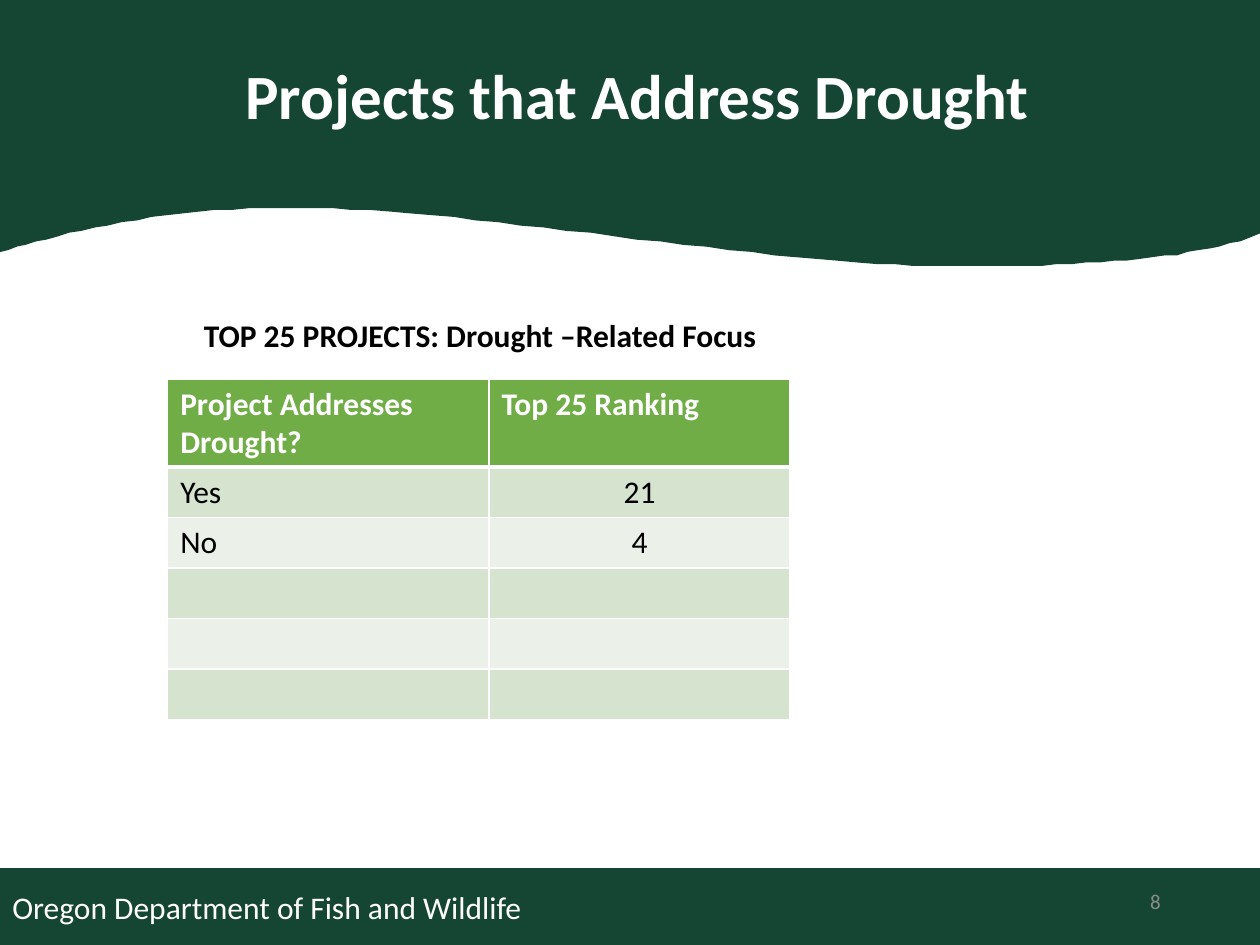
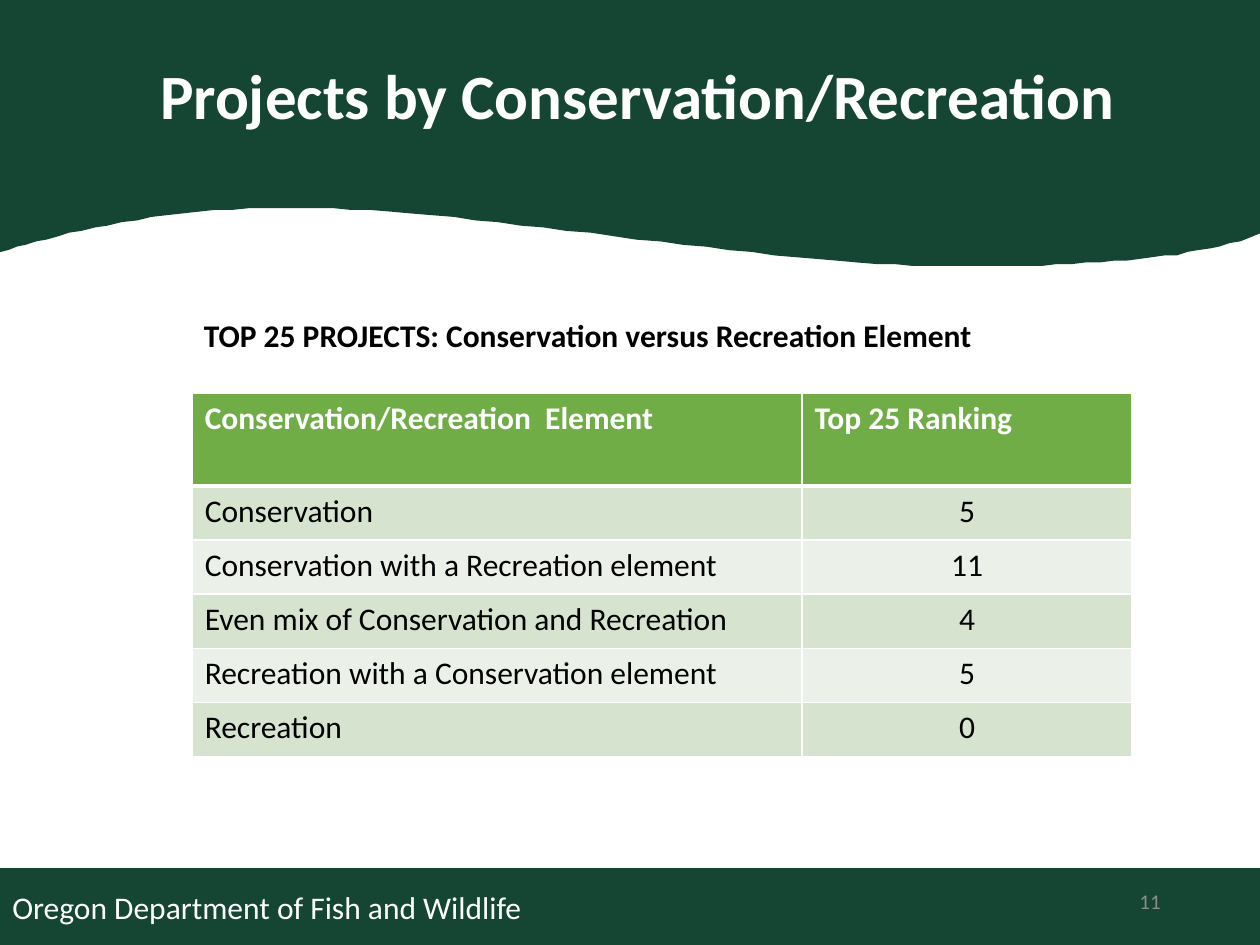
from lxml import etree
from pptx import Presentation
from pptx.dml.color import RGBColor
from pptx.enum.shapes import MSO_SHAPE as Shape
from pptx.enum.text import MSO_ANCHOR as Anchor, PP_ALIGN as Align
from pptx.oxml.ns import qn
from pptx.util import Pt

FOREST = RGBColor(0x14, 0x46, 0x33)
LEAF = RGBColor(0x70, 0xAD, 0x47)
BAND_DARK = RGBColor(0xD5, 0xE3, 0xCF)
BAND_LIGHT = RGBColor(0xEB, 0xF1, 0xE9)
GREY = RGBColor(0x8C, 0x8C, 0x8C)
WHITE = RGBColor(0xFF, 0xFF, 0xFF)
BLACK = RGBColor(0, 0, 0)
FONT = "Calibri"
DEPARTMENT = "Oregon Department of Fish and Wildlife"

# Lower edge of the header: Bezier segments in points, from right to left
WAVE_CORNERS = [(-17.3, 146.9), (-14.4, -4.3), (735.1, -4.3), (738, 120.2)]
WAVE_CURVES = [
    [(738, 120.2), (704.2, 145.4), (626.4, 149.8), (532.1, 149)],
    [(532.1, 149), (437.8, 147.6), (263.5, 115.9), (171.4, 115.9)],
    [(171.4, 115.9), (70.6, 113), (-17.3, 146.9), (-17.3, 146.9)],
]
CURVE_STEPS = 30

SLIDES = [
    {
        "number": "8",
        "title": "Projects that Address Drought",
        "caption": "TOP 25 PROJECTS: Drought –Related Focus",
        "table_at": (95.8, 216.5),
        "columns": (183.6, 172.1),
        "header_height": 50.4,
        "row_height": 28.8,
        "rows": [("Project Addresses Drought?", "Top 25 Ranking"),
                 ("Yes", "21"), ("No", "4"), ("", ""), ("", ""), ("", "")],
    },
    {
        "number": "11",
        "title": "Projects by Conservation/Recreation",
        "caption": "TOP 25 PROJECTS: Conservation versus Recreation Element",
        "table_at": (109.8, 224.8),
        "columns": (348.5, 188.6),
        "header_height": 53,
        "row_height": 30.9,
        "rows": [("Conservation/Recreation  Element", "Top 25 Ranking"),
                 ("Conservation", "5"),
                 ("Conservation with a Recreation element", "11"),
                 ("Even mix of Conservation and Recreation", "4"),
                 ("Recreation with a Conservation element", "5"),
                 ("Recreation", "0")],
    },
]


def write(text_frame, text, size=18, color=BLACK, bold=False,
          align=Align.LEFT, anchor=Anchor.TOP):
    text_frame.word_wrap = True
    text_frame.vertical_anchor = anchor
    paragraph = text_frame.paragraphs[0]
    paragraph.alignment = align
    if text:
        run = paragraph.add_run()
        run.text = text
        run.font.name = FONT
        run.font.size = Pt(size)
        run.font.bold = bold
        run.font.color.rgb = color


def add_border(cell, side, width):
    """Draw a white line on one side (L, R, T or B) of a table cell."""
    properties = cell._tc.get_or_add_tcPr()
    line = etree.SubElement(properties, qn(f"a:ln{side}"), w=str(Pt(width)))
    fill = etree.SubElement(line, qn("a:solidFill"))
    etree.SubElement(fill, qn("a:srgbClr"), val=str(WHITE))


wave_points = list(WAVE_CORNERS)
for start, control_1, control_2, end in WAVE_CURVES:
    for step in range(1, CURVE_STEPS + 1):
        t = step / CURVE_STEPS
        wave_points.append(tuple(
            (1 - t) ** 3 * a + 3 * (1 - t) ** 2 * t * b + 3 * (1 - t) * t ** 2 * c + t ** 3 * d
            for a, b, c, d in zip(start, control_1, control_2, end)))

presentation = Presentation()
presentation.slide_width = Pt(720)
presentation.slide_height = Pt(540)

for content in SLIDES:
    slide = presentation.slides.add_slide(presentation.slide_layouts[6])
    shapes = slide.shapes

    # Footer band and wavy header
    footer = shapes.add_shape(Shape.RECTANGLE, 0, Pt(496.8), Pt(720), Pt(43.2))
    write(footer.text_frame, DEPARTMENT, color=WHITE, anchor=Anchor.MIDDLE)
    builder = shapes.build_freeform(*wave_points[0], scale=Pt(1))
    builder.add_line_segments(wave_points[1:], close=True)
    header = builder.convert_to_shape()
    for band, line_width in ((footer, 1), (header, 6)):
        band.shadow.inherit = False
        band.fill.solid()
        band.fill.fore_color.rgb = FOREST
        band.line.color.rgb = FOREST
        band.line.width = Pt(line_width)

    # Slide number, title and table caption
    number = shapes.add_textbox(Pt(508.3), Pt(500.4), Pt(162), Pt(28.8))
    write(number.text_frame, content["number"], size=12, color=GREY,
          align=Align.RIGHT, anchor=Anchor.MIDDLE)
    title = shapes.add_textbox(Pt(30.2), Pt(28.8), Pt(668.2), Pt(51))
    write(title.text_frame, content["title"], size=36, color=WHITE, bold=True,
          align=Align.CENTER)
    caption = shapes.add_textbox(Pt(109.4), Pt(177.1), Pt(500.4), Pt(29))
    write(caption.text_frame, content["caption"], bold=True)

    # Ranking table
    rows, columns = content["rows"], content["columns"]
    heights = [content["header_height"]] + [content["row_height"]] * (len(rows) - 1)
    left, top = content["table_at"]
    table = shapes.add_table(len(rows), len(columns), Pt(left), Pt(top),
                             Pt(sum(columns)), Pt(sum(heights))).table
    for column, width in zip(table.columns, columns):
        column.width = Pt(width)
    for row_index, (row, height) in enumerate(zip(rows, heights)):
        table.rows[row_index].height = Pt(height)
        is_header = row_index == 0
        fill_color = LEAF if is_header else BAND_DARK if row_index % 2 else BAND_LIGHT
        for column_index, text in enumerate(row):
            cell = table.cell(row_index, column_index)
            centred = column_index == 1 and not is_header
            write(cell.text_frame, text, bold=is_header,
                  color=WHITE if is_header else BLACK,
                  align=Align.CENTER if centred else Align.LEFT)
            for side in "LR":
                add_border(cell, side, 1)
            add_border(cell, "T", 3 if row_index == 1 else 1)
            add_border(cell, "B", 3 if is_header else 1)
            cell.fill.solid()
            cell.fill.fore_color.rgb = fill_color

presentation.save("out.pptx")
